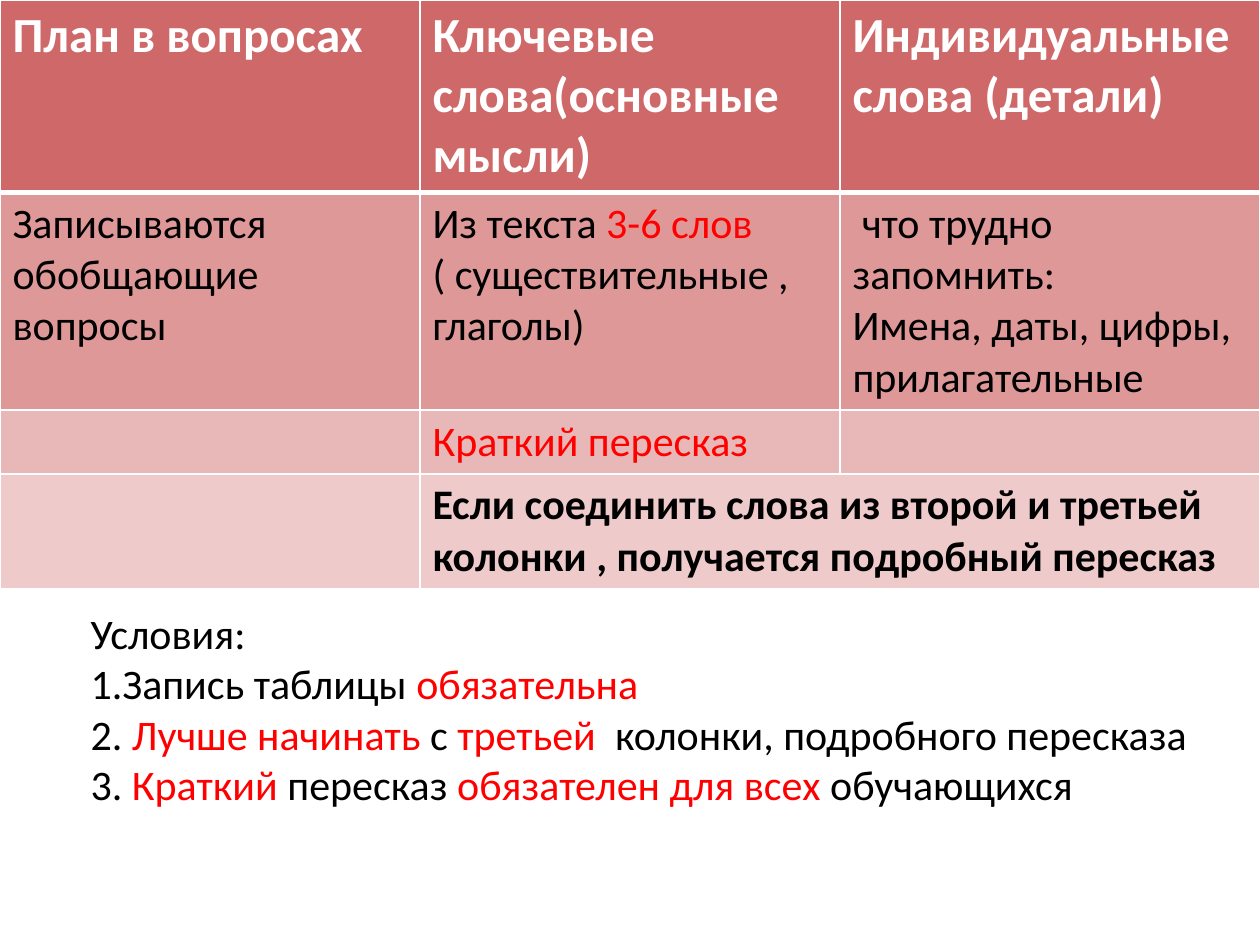
from lxml import etree
from pptx import Presentation
from pptx import util as u
from pptx.dml.color import RGBColor
from pptx.oxml.ns import qn

BLACK, WHITE, RED = "000000", "FFFFFF", "FF0000"


def rgb(value):
    return RGBColor.from_string(value)


class RetellingSlide:
    """Holds the style and the current slide; '|' in a text toggles the red accent."""

    font = "Calibri"

    def __init__(self, prs):
        self.s = prs.slides.add_slide(prs.slide_layouts[6])

    def add_lines(self, tf, lines, size, color=BLACK, bold=False):
        tf.word_wrap = True
        for i, line in enumerate(lines):
            p = tf.add_paragraph() if i else tf.paragraphs[0]
            p.font.name, p.font.size, p.font.bold = self.font, u.Pt(size), bold
            p.font.color.rgb = rgb(color)
            for j, part in enumerate(line.split("|")):
                if part:
                    r = p.add_run()
                    r.text = part
                    if j % 2:
                        r.font.color.rgb = rgb(RED)

    def text(self, x, y, w, h, lines, size):
        box = self.s.shapes.add_textbox(*map(u.Inches, (x, y, w, h)))
        self.add_lines(box.text_frame, lines, size)

    def border(self, cell, bottom):
        tcPr = cell._tc.get_or_add_tcPr()
        widths = {"a:lnL": 1, "a:lnR": 1, "a:lnT": 1, "a:lnB": bottom}
        for i, (tag, width) in enumerate(widths.items()):
            ln = etree.Element(qn(tag), w=str(u.Pt(width)))
            fill = etree.SubElement(ln, qn("a:solidFill"))
            etree.SubElement(fill, qn("a:srgbClr"), val=WHITE)
            tcPr.insert(i, ln)

    def table(self, width, heights, fills, rows):
        n = len(rows[0])
        frame = self.s.shapes.add_table(
            len(rows), n, 0, 0, u.Inches(width), u.Inches(sum(heights)))
        table = frame.table
        for i, (height, fill, row) in enumerate(zip(heights, fills, rows)):
            table.rows[i].height = u.Inches(height)
            head, last = i == 0, i == len(rows) - 1
            for j, lines in enumerate(row):
                cell = table.cell(i, j)
                cell.fill.solid()
                cell.fill.fore_color.rgb = rgb(fill)
                self.border(cell, 3 if head else 1)
                self.add_lines(cell.text_frame, lines, 28 if head else 24,
                               WHITE if head else BLACK, head or last)
        return table


def main():
    prs = Presentation()
    prs.slide_width, prs.slide_height = u.Inches(10), u.Inches(7.5)
    slide = RetellingSlide(prs)
    table = slide.table(
        10, [1.5, 1.7, 0.5, 0.9], ["CF6868", "DE9898", "E8B7B7", "EECACA"], [
            [["План в вопросах"], ["Ключевые слова(основные мысли)"],
             ["Индивидуальные слова (детали)"]],
            [["Записываются обобщающие вопросы"],
             ["Из текста |3-6 слов", "( существительные , глаголы)"],
             [" что трудно запомнить:", "Имена, даты, цифры, прилагательные"]],
            [[], ["|Краткий пересказ"], []],
            [[], ["Если соединить слова из второй и третьей колонки , "
                  "получается подробный пересказ"], []],
        ])
    table.cell(3, 1).merge(table.cell(3, 2))
    slide.text(0.62, 4.77, 8.98, 2.42, [
        "Условия:",
        "1.Запись таблицы |обязательна",
        "2. |Лучше начинать |с |третьей  |колонки, подробного пересказа",
        "3. |Краткий |пересказ |обязателен для всех |обучающихся",
    ], 24)
    prs.save("out.pptx")


if __name__ == "__main__":
    main()
